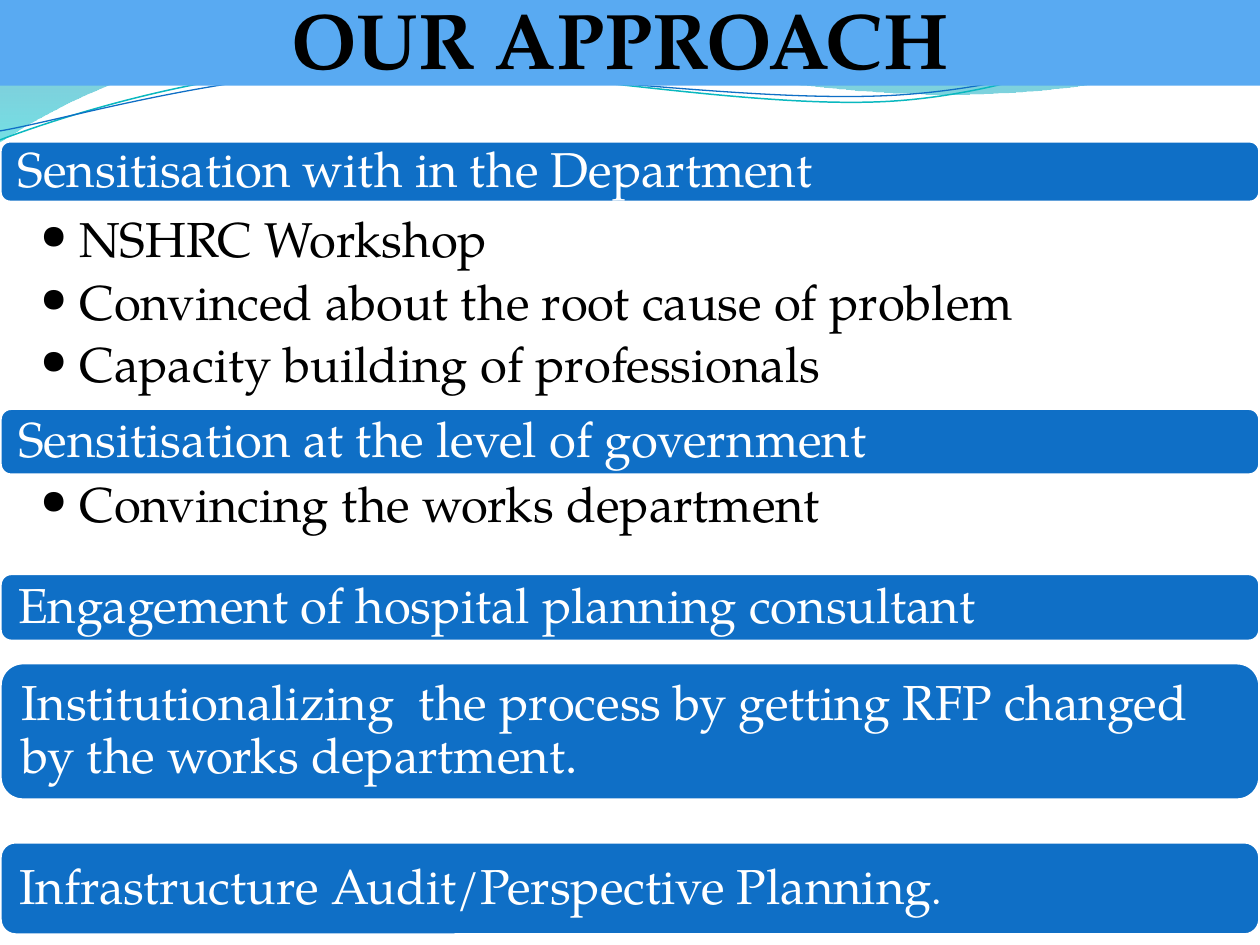
from dataclasses import dataclass
from math import cos, radians, sin

from lxml import etree
from pptx import Presentation
from pptx.dml.color import RGBColor
from pptx.enum.shapes import MSO_SHAPE
from pptx.enum.text import MSO_ANCHOR, PP_ALIGN
from pptx.oxml.ns import qn
from pptx.util import Cm, Pt

RECT, ROUND = MSO_SHAPE.RECTANGLE, MSO_SHAPE.ROUNDED_RECTANGLE
TOP, MIDDLE, BOTTOM = MSO_ANCHOR.TOP, MSO_ANCHOR.MIDDLE, MSO_ANCHOR.BOTTOM
LEFT, CENTER, JUSTIFY = PP_ALIGN.LEFT, PP_ALIGN.CENTER, PP_ALIGN.JUSTIFY

FONT = "TeX Gyre Pagella"
WIDTH, HEIGHT = 25.4, 19.05  # slide size in cm
BLUE, SKY, TEAL = "0F6FC6", "59AAF2", "0AB8BF"
WHITE, BLACK = "FFFFFF", "000000"
TILT = -2.7  # degrees, of the two thin lines


@dataclass
class Wave:
    """Outline in cm: a pair is a line end, a six-tuple is a Bezier curve."""
    start: tuple
    segments: list
    stops: tuple = ()  # (position %, colour, opacity %)
    line: str = ""
    weight: float = 0
    center: tuple = ()  # given when the shape is tilted


@dataclass
class Bar:
    top: float
    height: float
    text: str
    align: PP_ALIGN = LEFT
    ending: str = ""  # smaller closing mark


@dataclass
class BulletList:
    top: float
    height: float
    items: list


WAVES = [
    Wave((0, 0), [(11.18, -0.03), (12.09, 0.43, 16.87, 1.6, 19.25, 1.6),
                  (21.67, 1.6, 24.33, 0.66, 25.4, 0.23), (25.43, 0.91),
                  (24.97, 1.12, 22.1, 1.93, 18.95, 1.9),
                  (15.8, 1.9, 9.7, 0.71, 6.53, 0.86),
                  (3.28, 0.91, 1.17, 2.11, -0.03, 2.87)],
         stops=((0, "0074A1", 45), (100, "00C6CF", 55))),
    Wave((12.17, -0.03), [(12.93, 0.28, 17.32, 1.57, 19.53, 1.65),
                          (21.74, 1.75, 24.41, 0.81, 25.4, 0.53), (25.4, 0)],
         stops=((0, "00A1A9", 30), (80, "008BBF", 45))),
    Wave((0, 2.82), [(1.22, 2.36, 4.01, 1.45, 7.04, 1.32),
                     (10.03, 1.19, 15.06, 2.26, 18.11, 2.03),
                     (21.16, 1.8, 23.83, 0.38, 25.35, -0.05)],
         line=TEAL, weight=0.85, center=(12.67, 1.46)),
    Wave((0, 2.64), [(1.19, 2.44, 4.17, 1.55, 7.19, 1.42),
                     (10.24, 1.3, 15.16, 2.13, 18.21, 1.91),
                     (21.23, 1.7, 23.9, 0.53, 25.4, 0.15)],
         line=BLUE, weight=0.75, center=(12.69, 1.5)),
]

STEPS = [
    Bar(2.84, 1.24, "Sensitisation with in the Department"),
    BulletList(4.24, 4.01, ["NSHRC Workshop",
                            "Convinced about the root cause of problem",
                            "Capacity building of professionals"]),
    Bar(8.23, 1.35, "Sensitisation at the level of government"),
    BulletList(9.58, 1.35, ["Convincing the works department"]),
    Bar(11.56, 1.37, "Engagement of hospital planning consultant", JUSTIFY),
    Bar(13.36, 2.77, "Institutionalizing  the process by getting RFP changed "
                     "by the works department."),
    Bar(16.97, 1.88, "Infrastructure Audit/Perspective Planning", ending="."),
]


def rgb(colour: str) -> RGBColor:
    return RGBColor.from_string(colour)


def add_run(p, text: str, *, size=28, color=BLACK, bold=False) -> None:
    r = p.add_run()
    r.text = text
    r.font.name, r.font.size, r.font.bold = FONT, Pt(size), bold
    r.font.color.rgb = rgb(color)


def set_frame(tf, insets: tuple, anchor: MSO_ANCHOR) -> None:
    tf.word_wrap = True
    tf.vertical_anchor = anchor
    tf.margin_left, tf.margin_top, tf.margin_right, tf.margin_bottom = map(Cm, insets)


def add_box(slide, kind: MSO_SHAPE, top: float, height: float, fill: str):
    sp = slide.shapes.add_shape(kind, 0, Cm(top), Cm(WIDTH), Cm(height))
    sp.shadow.inherit = False
    sp.fill.solid()
    sp.fill.fore_color.rgb = rgb(fill)
    sp.line.fill.background()
    return sp


def set_gradient(sp, stops: tuple) -> None:
    """Vertical gradient with opacity at each stop."""
    sp.fill.background()
    none = sp._element.spPr.find(qn("a:noFill"))
    grad = etree.Element(qn("a:gradFill"), rotWithShape="1")
    gs_list = etree.SubElement(grad, qn("a:gsLst"))
    for pos, colour, opacity in stops:
        gs = etree.SubElement(gs_list, qn("a:gs"), pos=str(pos * 1000))
        clr = etree.SubElement(gs, qn("a:srgbClr"), val=colour)
        etree.SubElement(clr, qn("a:alpha"), val=str(opacity * 1000))
    etree.SubElement(grad, qn("a:lin"), ang="5400000", scaled="0")
    none.getparent().replace(none, grad)


def untilt(point: tuple, center: tuple) -> tuple:
    """Place of a point before the shape is tilted about its center."""
    dx, dy = point[0] - center[0], point[1] - center[1]
    c, s = cos(radians(-TILT)), sin(radians(-TILT))
    return center[0] + dx * c - dy * s, center[1] + dx * s + dy * c


def bend(sp, segments: list) -> None:
    """Turn each curve's three line ends into one Bezier segment."""
    ends = iter(list(sp._element.iter(qn("a:lnTo"))))
    for seg in segments:
        first = next(ends)
        if len(seg) == 6:
            curve = etree.Element(qn("a:cubicBezTo"))
            first.addprevious(curve)
            for end in (first, next(ends), next(ends)):
                curve.append(end[0])
                end.getparent().remove(end)


def add_wave(slide, wave: Wave) -> None:
    points = [wave.start]
    for seg in wave.segments:
        points += zip(seg[::2], seg[1::2])
    if wave.center:
        points = [untilt(pt, wave.center) for pt in points]
    points = [(Cm(x), Cm(y)) for x, y in points]
    builder = slide.shapes.build_freeform(*points[0])
    builder.add_line_segments(points[1:], close=bool(wave.stops))
    sp = builder.convert_to_shape()
    bend(sp, wave.segments)
    sp.shadow.inherit = False
    if wave.center:
        sp.rotation = TILT
    if wave.stops:
        set_gradient(sp, wave.stops)
        sp.line.fill.background()
    else:
        sp.fill.background()
        sp.line.color.rgb = rgb(wave.line)
        sp.line.width = Pt(wave.weight)


def add_bar(slide, bar: Bar) -> None:
    sp = add_box(slide, ROUND, bar.top, bar.height, BLUE)
    sp.line.color.rgb = rgb(WHITE)
    sp.line.width = Pt(2)
    set_frame(sp.text_frame, (0.3, 0.3, 0.3, 0.3), MIDDLE)
    p = sp.text_frame.paragraphs[0]
    p.alignment, p.line_spacing = bar.align, 0.9
    add_run(p, bar.text, color=WHITE)
    if bar.ending:
        add_run(p, bar.ending, size=24, color=WHITE)


def add_bullets(slide, group: BulletList) -> None:
    sp = slide.shapes.add_textbox(0, Cm(group.top), Cm(WIDTH), Cm(group.height))
    tf = sp.text_frame
    set_frame(tf, (0.81, 0.1, 0.56, 0.1), TOP)
    for i, item in enumerate(group.items):
        p = tf.add_paragraph() if i else tf.paragraphs[0]
        p.level, p.line_spacing, p.space_after = 1, 0.9, Pt(5.5)
        pPr = p._p.get_or_add_pPr()
        pPr.set("marL", str(Cm(0.79)))
        pPr.set("indent", str(-Cm(0.79)))
        etree.SubElement(pPr, qn("a:buFont"), typeface=FONT)
        etree.SubElement(pPr, qn("a:buChar"), char="•")
        add_run(p, item)


def main() -> None:
    prs = Presentation()
    prs.slide_width, prs.slide_height = Cm(WIDTH), Cm(HEIGHT)
    slide = prs.slides.add_slide(prs.slide_layouts[6])

    # Waves behind the title
    for wave in WAVES:
        add_wave(slide, wave)

    # Title band
    title = add_box(slide, RECT, 0, 1.73, SKY)
    set_frame(title.text_frame, (0, 0.13, 0, 0), BOTTOM)
    p = title.text_frame.paragraphs[0]
    p.alignment = CENTER
    add_run(p, "OUR APPROACH ", size=45, bold=True)

    # Steps and their details
    for step in STEPS:
        draw = add_bar if isinstance(step, Bar) else add_bullets
        draw(slide, step)

    prs.save("out.pptx")


if __name__ == "__main__":
    main()
